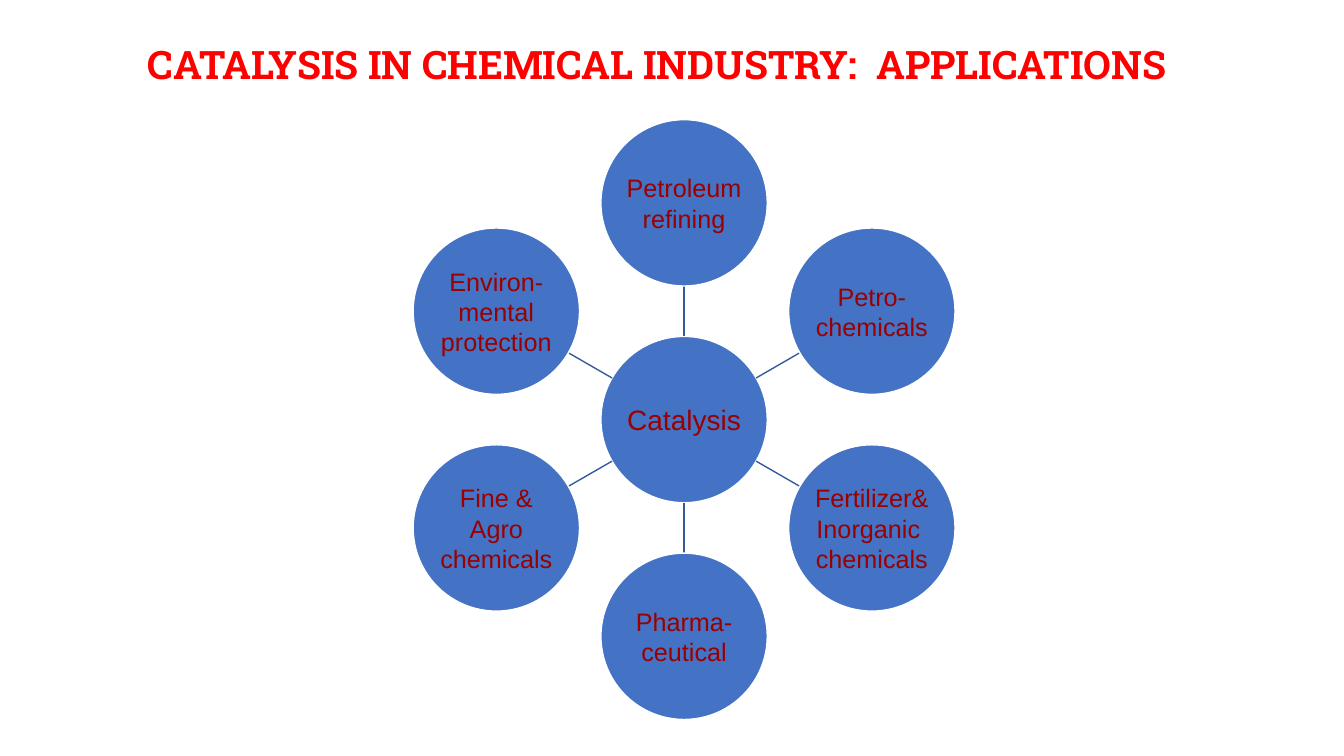
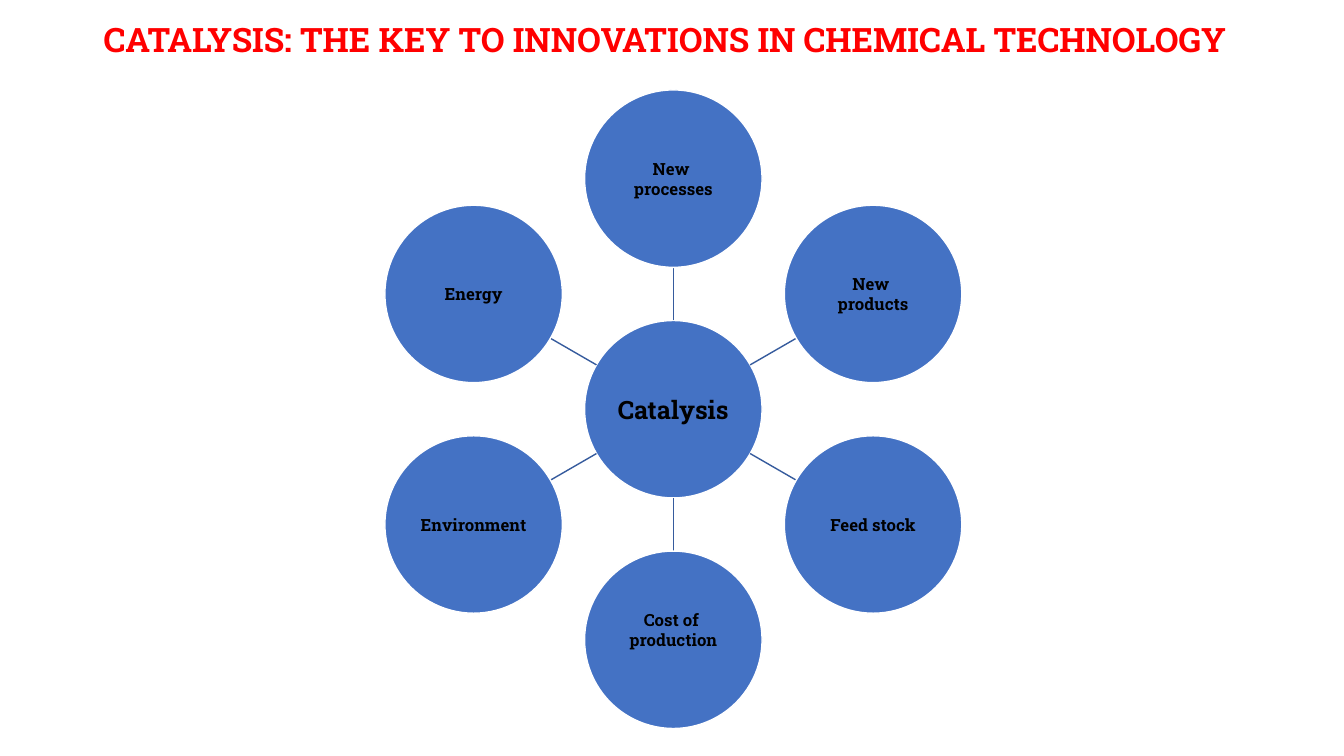
import math

import pptx
import pptx.dml.color
import pptx.enum.shapes
import pptx.enum.text
import pptx.oxml.xmlchemy
import pptx.util

RED = pptx.dml.color.RGBColor(0xFF, 0x00, 0x00)
MAROON = pptx.dml.color.RGBColor(0x99, 0x00, 0x00)
BLACK = pptx.dml.color.RGBColor(0x00, 0x00, 0x00)
WHITE = pptx.dml.color.RGBColor(0xFF, 0xFF, 0xFF)
BLUE = pptx.dml.color.RGBColor(0x44, 0x72, 0xC4)
SPOKE_BLUE = pptx.dml.color.RGBColor(0x36, 0x5B, 0x9D)

SLAB = "Roboto Slab"
SANS = "Arial"


def write(tf, text, size, font, color, bold=False, spacing=None):
    tf.word_wrap = True
    tf.vertical_anchor = pptx.enum.text.MSO_ANCHOR.MIDDLE
    for i, line in enumerate(text.split("\n")):
        p = tf.add_paragraph() if i else tf.paragraphs[0]
        p.alignment = pptx.enum.text.PP_ALIGN.CENTER
        if spacing:
            p.line_spacing = spacing
        r = p.add_run()
        r.text = line
        r.font.size = pptx.util.Pt(size)
        r.font.name = font
        r.font.bold = bold
        r.font.color.rgb = color


class Deck:
    def __init__(self):
        self.prs = pptx.Presentation()
        self.prs.slide_width = pptx.util.Inches(13.33)
        self.prs.slide_height = pptx.util.Inches(7.5)
        self.s = None

    def x(self, percent):
        return round(self.prs.slide_width * percent / 100)

    def y(self, percent):
        return round(self.prs.slide_height * percent / 100)

    def slide(self):
        self.s = self.prs.slides.add_slide(self.prs.slide_layouts[6])

    def title(self, text, top, width, height, size):
        sp = self.s.shapes.add_textbox(0, self.y(top), self.x(width), self.y(height))
        write(sp.text_frame, text, size, SLAB, RED, bold=True, spacing=0.9)

    def circle(self, cx, cy, diameter, text, **style):
        sp = self.s.shapes.add_shape(
            pptx.enum.shapes.MSO_SHAPE.OVAL,
            round(cx - diameter / 2), round(cy - diameter / 2), diameter, diameter)
        sp.shadow.inherit = False
        sp.fill.solid()
        sp.fill.fore_color.rgb = BLUE
        sp.line.color.rgb = WHITE
        sp.line.width = pptx.util.Pt(1)
        tf = sp.text_frame
        tf.margin_left = tf.margin_right = pptx.util.Inches(0.01)
        tf.margin_top = tf.margin_bottom = pptx.util.Inches(0.01)
        write(tf, text, **style)
        return sp

    def spoke(self, x1, y1, x2, y2):
        sp = self.s.shapes.add_connector(
            pptx.enum.shapes.MSO_CONNECTOR.STRAIGHT,
            round(x1), round(y1), round(x2), round(y2))
        sp.line.color.rgb = SPOKE_BLUE
        sp.line.width = pptx.util.Pt(1)
        sp._element.spPr.append(pptx.oxml.xmlchemy.OxmlElement("a:effectLst"))

    def wheel(self, center, diameter, ring, hub, hub_size, labels, size, **style):
        cx, cy = self.x(center[0]), self.y(center[1])
        diameter, ring = self.y(diameter), self.y(ring)
        inner, outer = diameter / 2, ring - diameter / 2
        self.circle(cx, cy, diameter, hub, size=hub_size, **style)
        nodes = []
        for i, label in enumerate(labels):
            angle = math.tau * i / len(labels)
            dx, dy = math.sin(angle), -math.cos(angle)
            self.spoke(cx + inner * dx, cy + inner * dy, cx + outer * dx, cy + outer * dy)
            nodes.append(self.circle(cx + ring * dx, cy + ring * dy, diameter, label,
                                     size=size, **style))
        return nodes


def main():
    deck = Deck()

    deck.slide()
    deck.title("CATALYSIS IN CHEMICAL INDUSTRY:  APPLICATIONS", 3.33, 97.75, 11.07, 28)
    deck.wheel((50.9, 55.5), 22, 28.67, "Catalysis", 20,
               ["Petroleum\nrefining", "Petro-\nchemicals",
                "Fertilizer&\nInorganic \nchemicals", "Pharma-\nceutical",
                "Fine &\nAgro\nchemicals", "Environ-\nmental\nprotection"],
               18, font=SANS, color=MAROON)

    deck.slide()
    deck.title("CATALYSIS: THE KEY TO INNOVATIONS IN CHEMICAL TECHNOLOGY", 1.47, 98.95, 8, 24)
    nodes = deck.wheel((50.1, 54.13), 23.47, 30.5, "Catalysis", 18,
                       ["New \nprocesses", "New \nproducts", "Feed stock",
                        "Cost of \nproduction", "Environment", "Energy"],
                       12, font=SLAB, color=BLACK, bold=True)
    nodes[3].text_frame.margin_bottom = pptx.util.Inches(0.21)

    deck.prs.save("out.pptx")


if __name__ == "__main__":
    main()
